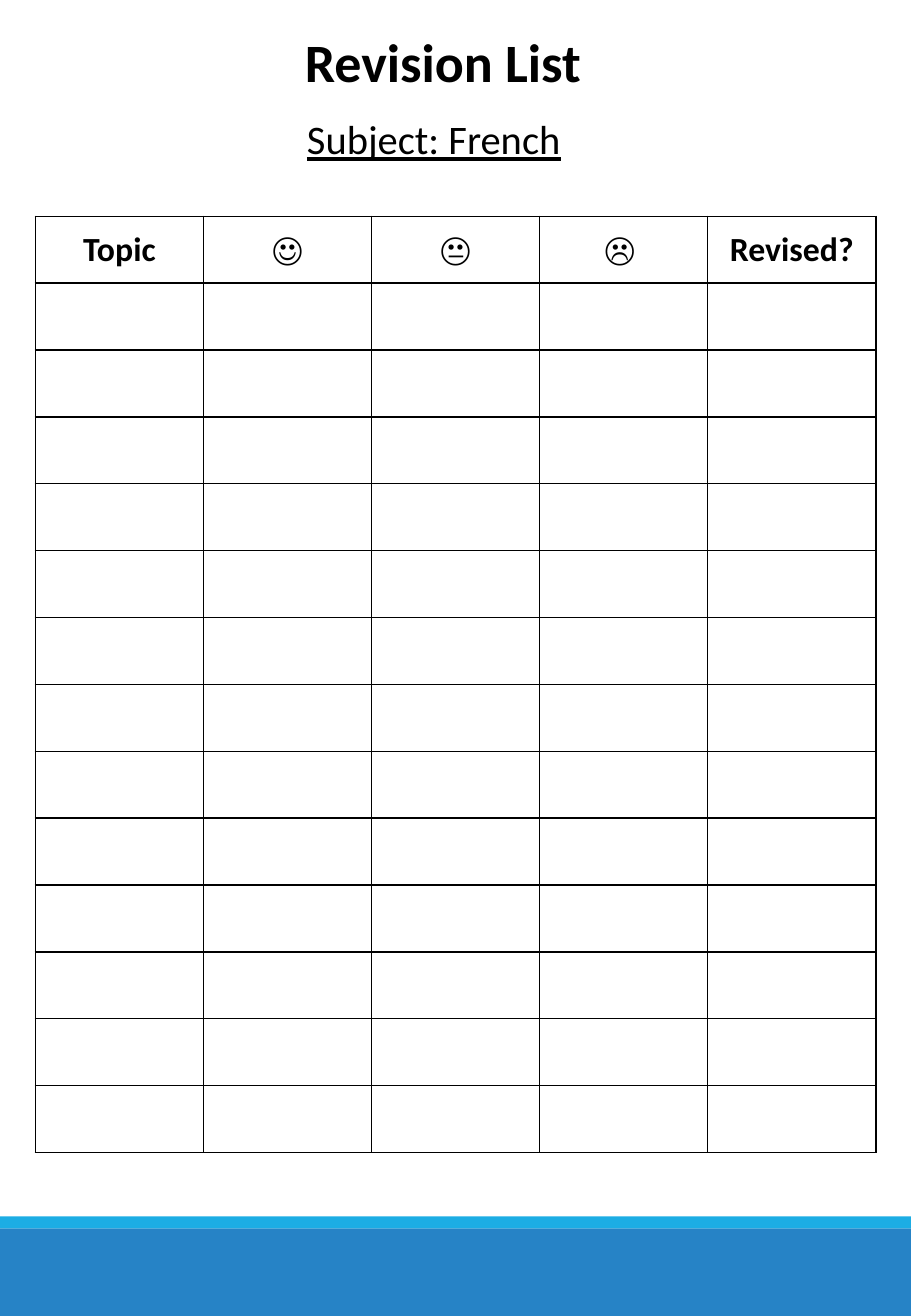
"""Build a printable revision list slide with a self-assessment table."""
import lxml.etree
import pptx
import pptx.dml.color
import pptx.enum.shapes
import pptx.enum.text
import pptx.oxml.ns
import pptx.util
from pptx.util import Cm

FONT = "Calibri"
INK = "000000"
PAGE_WIDTH, PAGE_HEIGHT = 19.05, 27.51
TITLE = "Revision List"
SUBJECT = "Subject: French"
HEADINGS = ["Topic", "☺", "😐", "☹ ", "Revised?"]
TOPIC_ROWS = 13
FOOTER_BANDS = [(25.68, 1.83, "2683C6"), (25.43, 0.25, "1CADE4")]
TITLE_BOX = (6.12, 0.46, 8.13, 1.63)
SUBJECT_BOX = (6.17, 2.26, 6.73, 1.27)
TABLE_BOX = (0.74, 4.52, 17.58, 19.58)
BORDER_POINTS = 1


def colour(value):
    return pptx.dml.color.RGBColor.from_string(value)


def write(frame, text, size, align, bold=False, underline=False):
    paragraph = frame.paragraphs[0]
    paragraph.alignment = align
    run = paragraph.add_run()
    run.text = text
    run.font.name = FONT
    run.font.size = pptx.util.Pt(size)
    run.font.bold = bold
    run.font.underline = underline
    run.font.color.rgb = colour(INK)


def outline(cell):
    properties = cell._tc.get_or_add_tcPr()
    for side in ("a:lnL", "a:lnR", "a:lnT", "a:lnB"):
        line = lxml.etree.SubElement(properties, pptx.oxml.ns.qn(side))
        line.set("w", str(pptx.util.Pt(BORDER_POINTS)))
        fill = lxml.etree.SubElement(line, pptx.oxml.ns.qn("a:solidFill"))
        ink = lxml.etree.SubElement(fill, pptx.oxml.ns.qn("a:srgbClr"))
        ink.set("val", INK)
    cell.fill.background()


def add_footer(slide):
    for top, height, shade in FOOTER_BANDS:
        band = slide.shapes.add_shape(
            pptx.enum.shapes.MSO_SHAPE.RECTANGLE,
            0, Cm(top), Cm(PAGE_WIDTH), Cm(height))
        band.shadow.inherit = False
        band.fill.solid()
        band.fill.fore_color.rgb = colour(shade)
        band.line.fill.background()


def add_headings(slide):
    title = slide.shapes.title
    title.left, title.top, title.width, title.height = map(Cm, TITLE_BOX)
    subject = slide.shapes.add_textbox(*map(Cm, SUBJECT_BOX))
    for frame in (title.text_frame, subject.text_frame):
        frame.word_wrap = True
        frame.auto_size = pptx.enum.text.MSO_AUTO_SIZE.NONE
        frame.vertical_anchor = pptx.enum.text.MSO_ANCHOR.TOP
    left = pptx.enum.text.PP_ALIGN.LEFT
    write(title.text_frame, TITLE, 32, left, bold=True)
    write(subject.text_frame, SUBJECT, 24, left, underline=True)


def add_checklist(slide):
    row_count = TOPIC_ROWS + 1
    checklist = slide.shapes.add_table(
        row_count, len(HEADINGS), *map(Cm, TABLE_BOX)).table
    checklist.first_row = False
    checklist.horz_banding = False
    for column in checklist.columns:
        column.width = Cm(TABLE_BOX[2] / len(HEADINGS))
    for row in checklist.rows:
        row.height = Cm(TABLE_BOX[3] / row_count)
    for cell in checklist.iter_cells():
        outline(cell)
    for cell, heading in zip(checklist.rows[0].cells, HEADINGS):
        cell.vertical_anchor = pptx.enum.text.MSO_ANCHOR.MIDDLE
        write(cell.text_frame, heading, 20,
              pptx.enum.text.PP_ALIGN.CENTER, bold=True)


def main():
    deck = pptx.Presentation()
    deck.slide_width, deck.slide_height = Cm(PAGE_WIDTH), Cm(PAGE_HEIGHT)
    slide = deck.slides.add_slide(deck.slide_layouts[5])
    add_footer(slide)
    add_headings(slide)
    add_checklist(slide)
    deck.save("out.pptx")


if __name__ == "__main__":
    main()
